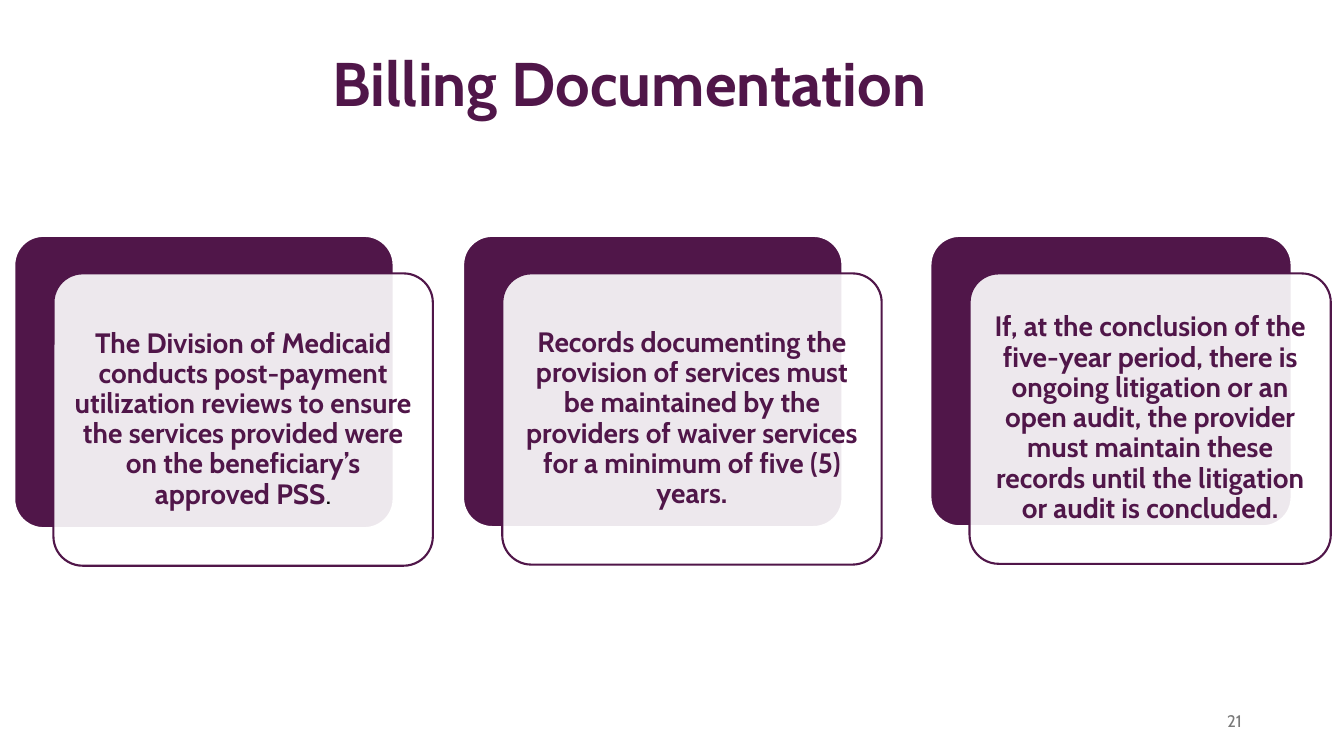
"""Build the Billing Documentation slide with three layered cards."""
from pptx import Presentation
from pptx.dml.color import RGBColor as RGB
from pptx.enum.shapes import MSO_SHAPE as Shape
from pptx.enum.text import MSO_ANCHOR as Anchor, MSO_AUTO_SIZE as Fit, PP_ALIGN as Align
from pptx.oxml.ns import qn
from pptx.util import Pt
from lxml import etree

hues = {"plum": "501649", "white": "FFFFFF", "gray": "797979", "black": "000000"}


def style(font, size, hue, bold):
    font.name = "Cabin"
    font.size = Pt(size)
    font.bold = bold
    font.color.rgb = RGB.from_string(hues[hue])


def add_card(left, top, width, height, fill, line):
    card = slide.shapes.add_shape(
        Shape.ROUNDED_RECTANGLE, Pt(left), Pt(top), Pt(width), Pt(height))
    card.adjustments[0] = 0.1
    card.shadow.inherit = False
    card.fill.solid()
    card.fill.fore_color.rgb = RGB.from_string(hues[fill])
    card.line.color.rgb = RGB.from_string(hues[line])
    card.line.width = Pt(1.5)
    return card


deck = Presentation()
deck.slide_width, deck.slide_height = Pt(960), Pt(540)
slide = deck.slides.add_slide(deck.slide_layouts[5])

title = slide.shapes.title
title.left, title.top, title.width, title.height = Pt(230.4), Pt(28.8), Pt(594), Pt(60.5)
frame = title.text_frame
frame.text = "Billing Documentation"
frame.auto_size = Fit.NONE
frame.vertical_anchor = Anchor.TOP
frame.paragraphs[0].alignment = Align.LEFT
style(frame.paragraphs[0].font, 44, "plum", True)

cards = [
    (10.2, 271, 208.8, "The Division of Medicaid conducts post-payment utilization reviews "
     "to ensure the services provided were on the beneficiary’s approved PSS", "."),
    (330.8, 271, 208, "Records documenting the provision of services must be maintained "
     "by the providers of waiver services for a minimum of five (5) years.", ""),
    (664.6, 258, 207.4, "If, at the conclusion of the five-year period, there is ongoing "
     "litigation or an open audit, the provider must maintain these records until "
     "the litigation or audit is concluded.", ""),
]
top, shift, inset = 168.5, (28, 26.8), Pt(6)
for left, width, height, text, stop in cards:
    add_card(left, top, width, height, "plum", "white")
    front = add_card(left + shift[0], top + shift[1], width, height, "white", "plum")
    tint = front.fill._xPr.find(qn("a:solidFill"))[0]
    etree.SubElement(tint, qn("a:alpha")).set("val", "90000")
    frame = front.text_frame
    frame.word_wrap = True
    frame.vertical_anchor = Anchor.MIDDLE
    frame.margin_left = frame.margin_right = inset
    frame.margin_top = frame.margin_bottom = inset
    para = frame.paragraphs[0]
    para.alignment = Align.CENTER
    para.line_spacing = 0.9
    para.space_after = Pt(7)
    style(para.font, 20, "plum", True)
    para.add_run().text = text
    if stop:
        end = para.add_run()
        end.text = stop
        style(end.font, 20, "black", False)

box = slide.shapes.add_textbox(Pt(678.2), Pt(500.4), Pt(216), Pt(28.8))
frame = box.text_frame
frame.word_wrap = True
frame.vertical_anchor = Anchor.MIDDLE
frame.text = "21"
frame.paragraphs[0].alignment = Align.RIGHT
style(frame.paragraphs[0].font, 12, "gray", False)

deck.save("out.pptx")
